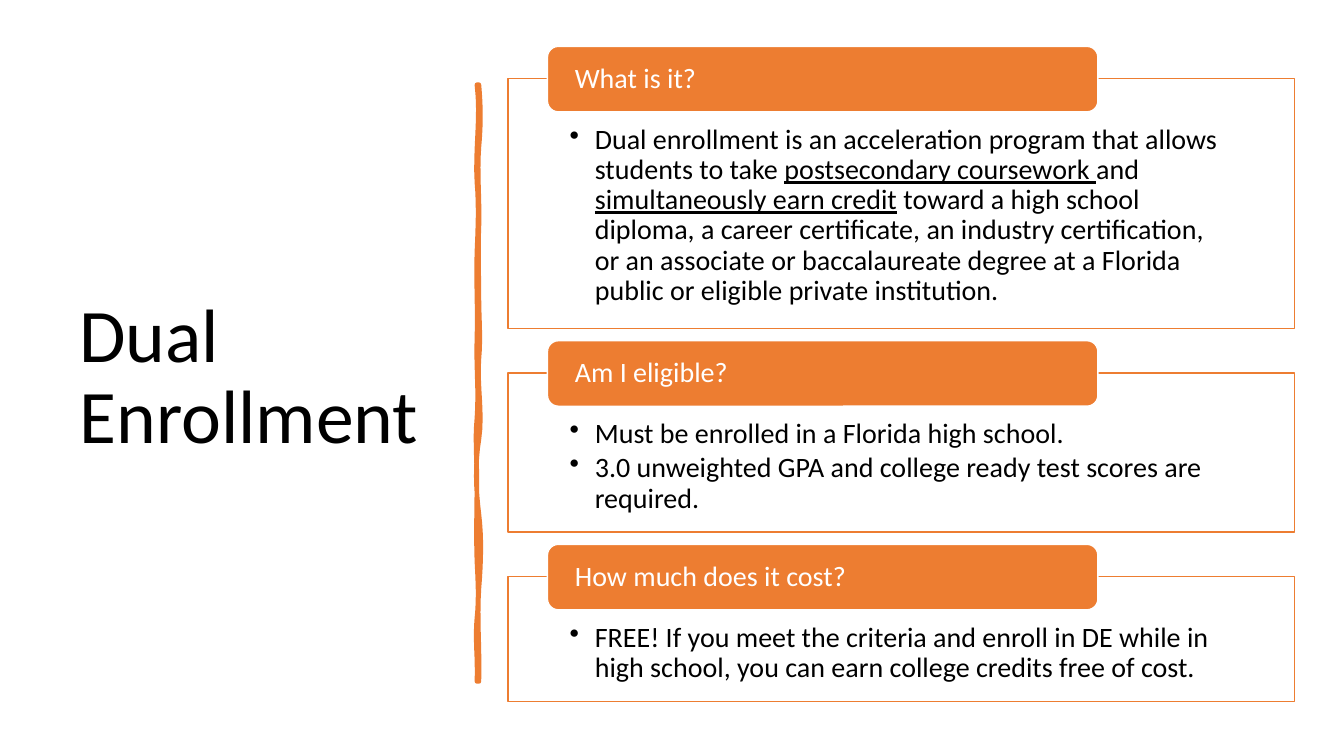
from dataclasses import dataclass

from pptx import Presentation
from pptx.dml.color import RGBColor
from pptx.enum.shapes import MSO_SHAPE as Shape
from pptx.enum.text import MSO_ANCHOR as Anchor, PP_ALIGN as Align
from pptx.oxml.ns import qn
from pptx.util import Inches, Pt
from lxml.etree import SubElement


@dataclass(frozen=True)
class Theme:
    font: str = "Calibri"
    accent: RGBColor = RGBColor(0xED, 0x7D, 0x31)
    ink: RGBColor = RGBColor(0, 0, 0)
    paper: RGBColor = RGBColor(255, 255, 255)
    title_size: int = 54
    body_size: int = 20


THEME = Theme()

# Each card: heading, box height, bullets made of (text, underlined) runs.
CARDS = [
    ("What is it?", 2.48, [[
        ("Dual enrollment is an acceleration program that allows students to take ", False),
        ("postsecondary coursework ", True),
        ("and ", False),
        ("simultaneously earn credit", True),
        (" toward a high school diploma, a career certificate, an industry certification, "
         "or an associate or baccalaureate degree at a Florida public or eligible private "
         "institution.", False),
    ]]),
    ("Am I eligible?", 1.58, [
        [("Must be enrolled in a Florida high school.", False)],
        [("3.0 unweighted GPA and college ready test scores are required.", False)],
    ]),
    ("How much does it cost?", 1.24, [
        [("FREE! If you meet the criteria and enroll in DE while in high school, "
          "you can earn college credits free of cost.", False)],
    ]),
]
CARD_GAP = 0.12
TAB_HEIGHT = 0.65
TAB_RISE = 0.32  # how far a heading tab stands above its box

# Each stretch of the bar's edges: (y where it ends, sideways pull at that end).
BAR_RIGHT = [(1.46, 0.02), (2.26, 0.01), (2.94, 0), (3.56, 0.02),
             (4.36, 0.04), (5.1, -0.03), (5.84, 0.02), (6.76, 0.01)]
BAR_LEFT = [(6.13, -0.02), (5.57, 0.01), (4.77, 0), (4.15, -0.02),
            (3.35, -0.01), (2.5, -0.01), (1.81, 0.02), (0.84, 0.04)]


def set_margins(text_frame, left, top, right, bottom):
    text_frame.word_wrap = True
    text_frame.margin_left, text_frame.margin_top = Inches(left), Inches(top)
    text_frame.margin_right, text_frame.margin_bottom = Inches(right), Inches(bottom)


def style_paragraph(paragraph, size, color):
    paragraph.alignment = Align.LEFT
    paragraph.line_spacing = 0.9
    for run in paragraph.runs:
        run.font.name, run.font.size = THEME.font, Pt(size)
        run.font.color.rgb = color


def paint(shape, fill, line, width):
    shape.shadow.inherit = False
    shape.fill.solid()
    shape.fill.fore_color.rgb = fill
    shape.line.color.rgb = line
    shape.line.width = Pt(width)


def add_bullet(paragraph, runs):
    properties = paragraph._p.get_or_add_pPr()
    properties.set("marL", str(Inches(0.25)))
    properties.set("indent", str(Inches(-0.25)))
    SubElement(properties, qn("a:buChar")).set("char", "•")
    paragraph.space_after = Pt(3)
    for text, underlined in runs:
        run = paragraph.add_run()
        run.text = text
        if underlined:
            run.font.underline = True
    style_paragraph(paragraph, THEME.body_size, THEME.ink)


def add_title(slide, left, top, width, height):
    box = slide.shapes.add_textbox(Inches(left), Inches(top), Inches(width), Inches(height))
    text_frame = box.text_frame
    set_margins(text_frame, 0.1, 0.05, 0.1, 0.05)
    text_frame.vertical_anchor = Anchor.MIDDLE
    text_frame.text = "Dual Enrollment"
    style_paragraph(text_frame.paragraphs[0], THEME.title_size, THEME.ink)


def wavy_edge(x, y, pull, stretches, steps=8):
    """Return points along smooth joined curves; each leaves opposite to the last pull."""
    points = [(x, y)]
    for end, next_pull in stretches:
        for step in range(1, steps + 1):
            t = step / steps
            sway = 3 * t * (1 - t) * ((1 - t) * pull + t * next_pull)
            points.append((x + sway, y + t * (end - y)))
        y, pull = end, -next_pull
    return points


def add_wavy_bar(slide, left, right, top, bottom):
    outline = (wavy_edge(right, top, 0.02, BAR_RIGHT)
               + wavy_edge(left, bottom, 0.01, BAR_LEFT))
    points = [(Inches(x), Inches(y)) for x, y in outline]
    builder = slide.shapes.build_freeform(*points[0], scale=1.0)
    builder.add_line_segments(points[1:], close=True)
    paint(builder.convert_to_shape(), THEME.accent, THEME.accent, 3.25)


def add_card(slide, left, top, width, height, heading, bullets):
    """Draw a bulleted box with a heading tab across its upper edge."""
    box = slide.shapes.add_shape(Shape.RECTANGLE, Inches(left), Inches(top + TAB_RISE),
                                 Inches(width), Inches(height))
    paint(box, THEME.paper, THEME.accent, 1)
    text_frame = box.text_frame
    set_margins(text_frame, 0.61, 0.46, 0.61, 0.16)
    text_frame.vertical_anchor = Anchor.TOP
    for index, runs in enumerate(bullets):
        paragraph = text_frame.add_paragraph() if index else text_frame.paragraphs[0]
        add_bullet(paragraph, runs)

    tab = slide.shapes.add_shape(Shape.ROUNDED_RECTANGLE, Inches(left + 0.05 * width),
                                 Inches(top), Inches(0.7 * width), Inches(TAB_HEIGHT))
    paint(tab, THEME.accent, THEME.paper, 1)
    text_frame = tab.text_frame
    set_margins(text_frame, 0.24, 0, 0.24, 0)
    text_frame.vertical_anchor = Anchor.MIDDLE
    text_frame.text = heading
    style_paragraph(text_frame.paragraphs[0], THEME.body_size, THEME.paper)


def add_cards(slide, left, top, width):
    for heading, height, bullets in CARDS:
        add_card(slide, left, top, width, height, heading, bullets)
        top += TAB_RISE + height + CARD_GAP


def main():
    presentation = Presentation()
    presentation.slide_width, presentation.slide_height = Inches(13.33), Inches(7.5)
    slide = presentation.slides.add_slide(presentation.slide_layouts[6])
    add_title(slide, 0.69, 0.7, 3.74, 6.11)
    add_wavy_bar(slide, 4.73, 4.75, 0.84, 6.76)
    add_cards(slide, 5.04, 0.46, 7.8)
    presentation.save("out.pptx")


if __name__ == "__main__":
    main()
